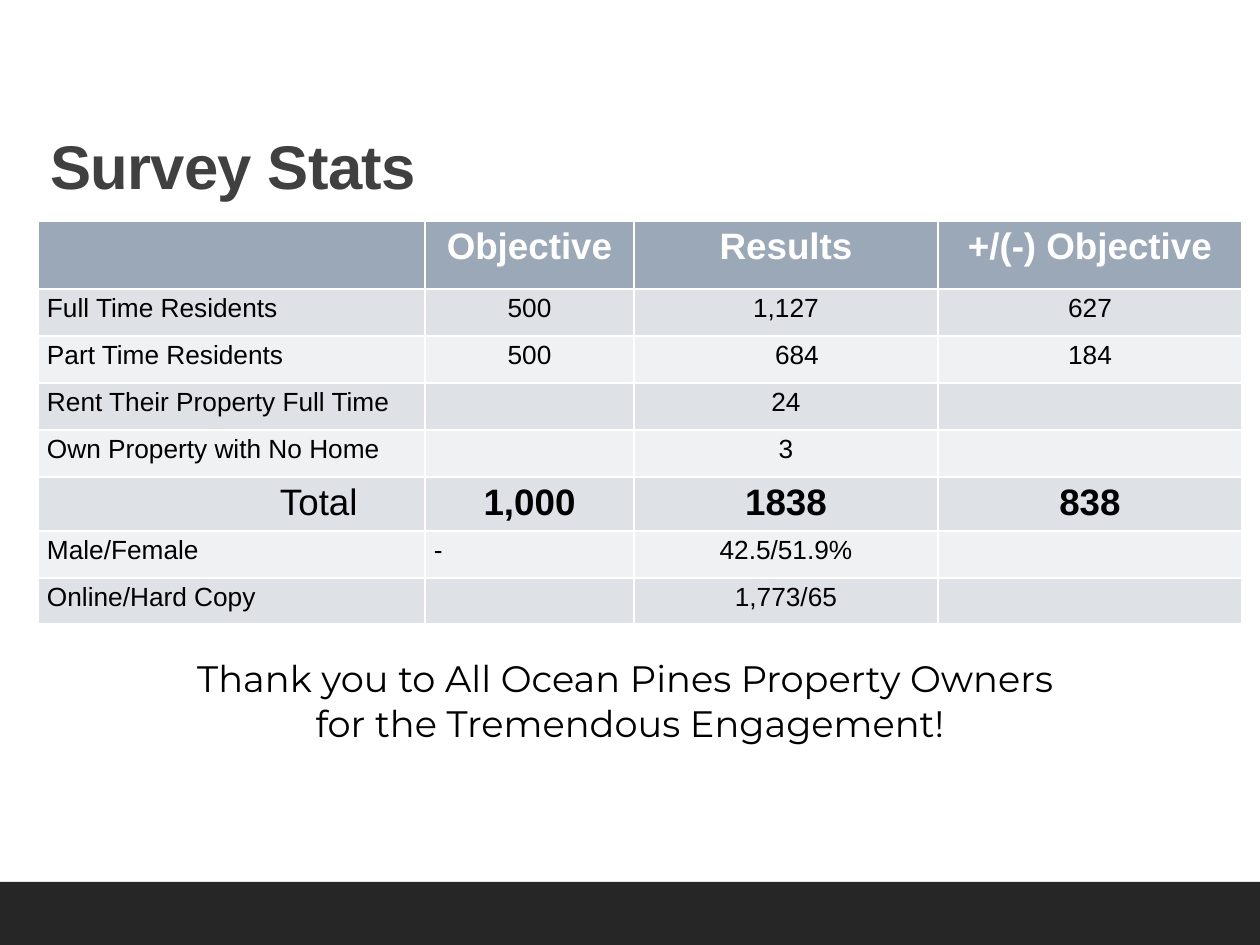
from pptx import Presentation
from pptx import util as u
from pptx.dml.color import RGBColor
from pptx.enum import shapes, text

WHITE = RGBColor(0xFF, 0xFF, 0xFF)
BLACK = RGBColor(0x00, 0x00, 0x00)
TITLE_GRAY = RGBColor(0x40, 0x40, 0x40)
FOOTER_GRAY = RGBColor(0x26, 0x26, 0x26)
HEADER_BLUE = RGBColor(0x9B, 0xA8, 0xB7)
BANDS = (RGBColor(0xDE, 0xE1, 0xE6), RGBColor(0xEF, 0xF1, 0xF3))

COLUMN_WIDTHS = (387, 209, 304, 304)
ROW_HEIGHTS = (68, 47, 47, 47, 47, 53, 47, 46)
TOTAL_ROW = 5
CELL_INSET = 9
# Extra left inset for cells whose text sits further right
CELL_SHIFTS = {(2, 2): 22, (TOTAL_ROW, 0): 233}
LEFT_CELLS = {(6, 1)}
STATS = (
    ("", "Objective", "Results", "+/(-) Objective"),
    ("Full Time Residents", "500", "1,127", "627"),
    ("Part Time Residents", "500", "684", "184"),
    ("Rent Their Property Full Time", "", "24", ""),
    ("Own Property with No Home", "", "3", ""),
    ("Total", "1,000", "1838", "838"),
    ("Male/Female", "-", "42.5/51.9%", ""),
    ("Online/Hard Copy", "", "1,773/65", ""),
)


def px(length):
    return u.Emu(round(length * 914400 / 126))


class SlideBuilder:
    def __init__(self, slide, font="Arial"):
        self.slide = slide
        self.font = font

    def style(self, paragraph, size, color, bold=False, font=None, align=None):
        paragraph.alignment = align
        for target in (paragraph, *paragraph.runs):
            target.font.name = font or self.font
            target.font.size = u.Pt(size)
            target.font.bold = bold
            target.font.color.rgb = color

    def bar(self, left, top, width, height, color):
        shape = self.slide.shapes.add_shape(
            shapes.MSO_SHAPE.RECTANGLE, px(left), px(top), px(width), px(height))
        shape.shadow.inherit = False
        shape.fill.solid()
        shape.fill.fore_color.rgb = color
        shape.line.fill.background()

    def text(self, left, top, width, height, content, wrap=True, **style):
        box = self.slide.shapes.add_textbox(px(left), px(top), px(width), px(height))
        box.text_frame.text = content
        box.text_frame.word_wrap = wrap
        for paragraph in box.text_frame.paragraphs:
            self.style(paragraph, **style)
        return box.text_frame

    def table(self, left, top, rows):
        table = self.slide.shapes.add_table(
            len(rows), len(COLUMN_WIDTHS), px(left), px(top),
            px(sum(COLUMN_WIDTHS)), px(sum(ROW_HEIGHTS))).table
        for column, width in zip(table.columns, COLUMN_WIDTHS):
            column.width = px(width)
        for row, height in zip(table.rows, ROW_HEIGHTS):
            row.height = px(height)
        for r, values in enumerate(rows):
            for c, value in enumerate(values):
                self.cell(table.cell(r, c), r, c, value)

    def cell(self, cell, row, column, value):
        header, total = row == 0, row == TOTAL_ROW
        cell.fill.solid()
        cell.fill.fore_color.rgb = HEADER_BLUE if header else BANDS[(row - 1) % 2]
        cell.margin_left = px(CELL_INSET + CELL_SHIFTS.get((row, column), 0))
        cell.margin_right = px(CELL_INSET)
        cell.margin_top = cell.margin_bottom = px(5)
        cell.text_frame.text = value
        left_aligned = column == 0 or (row, column) in LEFT_CELLS
        self.style(
            cell.text_frame.paragraphs[0],
            size=21 if header or total else 15,
            color=WHITE if header else BLACK,
            bold=header or (total and column > 0),
            align=text.PP_ALIGN.LEFT if left_aligned else text.PP_ALIGN.CENTER)


def main():
    presentation = Presentation()
    presentation.slide_width, presentation.slide_height = px(1260), px(945)
    builder = SlideBuilder(presentation.slides.add_slide(presentation.slide_layouts[6]))

    # Footer bar
    builder.bar(0, 882, 1260, 63, FOOTER_GRAY)

    # Title
    title = builder.text(38, 130, 1040, 150, "Survey Stats",
                         size=35.2, color=TITLE_GRAY, bold=True)
    title.paragraphs[0].line_spacing = 0.9
    title.paragraphs[0].runs[0].font._element.set("spc", "-40")

    # Survey results
    builder.table(38, 221, STATS)

    # Closing thanks
    thanks = builder.text(
        135, 650, 990, 102,
        "Thank you to All Ocean Pines Property Owners \nfor the Tremendous Engagement!",
        wrap=False, size=21, color=BLACK, font="Montserrat",
        align=text.PP_ALIGN.CENTER)
    thanks.auto_size = text.MSO_AUTO_SIZE.SHAPE_TO_FIT_TEXT

    presentation.save("out.pptx")


if __name__ == "__main__":
    main()
